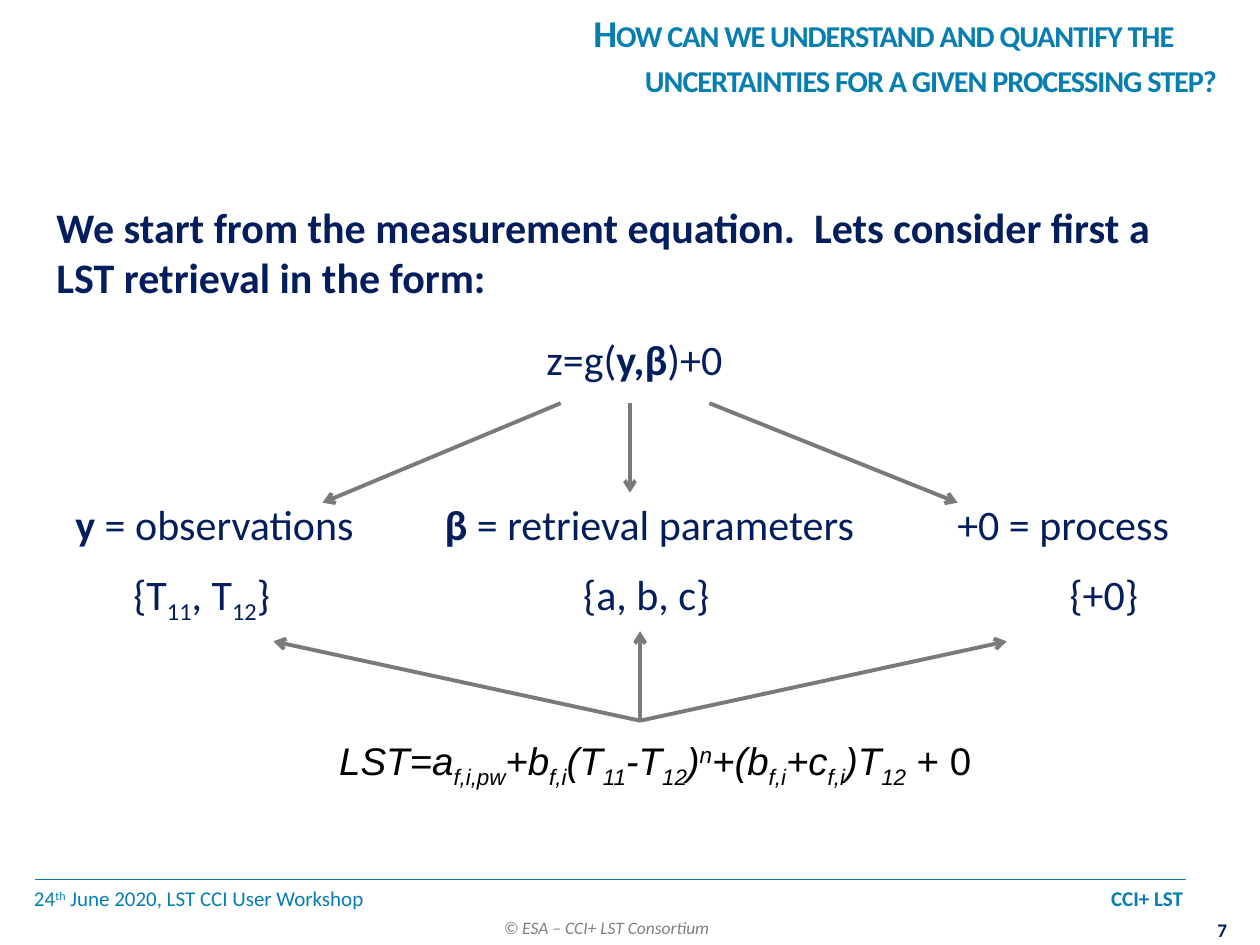
from lxml.etree import SubElement
from pptx import Presentation
from pptx.dml.color import RGBColor
from pptx.enum.shapes import MSO_CONNECTOR
from pptx.enum.text import MSO_ANCHOR, PP_ALIGN
from pptx.oxml.ns import qn
from pptx.util import Inches, Pt

COLORS = {"teal": "067EB0", "navy": "041E5D", "footer": "808080",
          "arrow": "7A7A7A", "black": "000000"}
SUB, SUP = -25, 30

prs = Presentation()
prs.slide_width, prs.slide_height = Inches(10), Inches(7.5)
slide = prs.slides.add_slide(prs.slide_layouts[6])


def add_text(box, paragraphs, size, color, font="Calibri", inset=(0.1, 0.05), wrap=True):
    """Add a text box; a paragraph is (runs, options), a run is (text, style, baseline).

    Style letters are b for bold and i for italic; baseline is a percentage.
    """
    frame = slide.shapes.add_textbox(*map(Inches, box)).text_frame
    frame.word_wrap = wrap
    frame.margin_left = frame.margin_right = Inches(inset[0])
    frame.margin_top = frame.margin_bottom = Inches(inset[1])
    for index, (runs, options) in enumerate(paragraphs):
        paragraph = frame.paragraphs[0] if index == 0 else frame.add_paragraph()
        if "tabs" in options:
            tab_list = SubElement(paragraph._p.get_or_add_pPr(), qn("a:tabLst"))
            for position, side in options["tabs"]:
                SubElement(tab_list, qn("a:tab"), pos=str(Inches(position)), algn=side)
        paragraph.alignment = options.get("align", PP_ALIGN.LEFT)
        paragraph.space_before = Pt(options.get("before", 0))
        paragraph.space_after = Pt(options.get("after", 0))
        for text, style, baseline in runs:
            run = paragraph.add_run()
            run.text = text
            run.font.name, run.font.size = font, Pt(size)
            run.font.bold, run.font.italic = "b" in style, "i" in style
            run.font.color.rgb = RGBColor.from_string(COLORS[color])
            if baseline:
                run.font._element.set("baseline", str(baseline * 1000))
    return frame


def add_line(start, end, color, width, arrow=False):
    line = slide.shapes.add_connector(MSO_CONNECTOR.STRAIGHT, *map(Inches, start + end))
    line.line.color.rgb = RGBColor.from_string(COLORS[color])
    line.line.width = Pt(width)
    if arrow:
        SubElement(line.line._get_or_add_ln(), qn("a:tailEnd"), type="arrow")
    SubElement(line._element.spPr, qn("a:effectLst"))


# Footer
add_text((0.27, 6.98, 9.14, 0.3),
         [([("24", "", 0), ("th", "", SUP), (" June 2020, LST CCI User Workshop\t", "", 0),
            ("CCI+ LST", "b", 0)], {"tabs": [(9.12, "r")]})],
         12, "teal", inset=(0, 0.05))
add_line((0.28, 6.98), (9.41, 6.98), "teal", 1)
add_text((3.9, 7.23, 1.86, 0.27), [([("© ESA – CCI+ LST Consortium", "i", 0)], {})],
         10, "footer", wrap=False)
add_text((9.57, 7.29, 0.26, 0.19), [([("7", "b", 0)], {"align": PP_ALIGN.CENTER})],
         11, "navy", inset=(0, 0), wrap=False)

# Title
title = add_text(
    (3.43, 0, 5.98, 0.87),
    [([("How can we understand and quantify the uncertainties for a given processing step?",
        "b", 0)], {"align": PP_ALIGN.RIGHT})], 21.6, "teal")
title.vertical_anchor = MSO_ANCHOR.MIDDLE
title_style = title.paragraphs[0].runs[0].font._element
title_style.set("cap", "small")
title_style.set("spc", "-60")

# Measurement equation and its terms
add_text((0.35, 1.55, 9.37, 2.91), [
    ([("We start from the measurement equation.  Lets consider first a LST retrieval "
       "in the form:", "b", 0)], {"after": 6}),
    ([("z=g(", "", 0), ("y,β", "b", 0), (")+0", "", 0)],
     {"align": PP_ALIGN.CENTER, "before": 12, "after": 6}),
    ([("\ty", "b", 0), (" = observations\t", "", 0), ("β", "b", 0),
      (" = retrieval parameters\t+0 = process", "", 0)],
     {"before": 59.3, "after": 6, "tabs": [(0.15, "l"), (3.08, "l"), (7.15, "l")]}),
], 24, "navy")

# LST retrieval
lst_terms = [("LST=a", 0), ("f,i,pw", SUB), ("+b", 0), ("f,i", SUB), ("(T", 0), ("11", SUB),
             ("-T", 0), ("12", SUB), (")", 0), ("n", SUP), ("+(b", 0), ("f,i", SUB),
             ("+c", 0), ("f,i", SUB), (")T", 0), ("12", SUB)]
lst_runs = [(text, "i", baseline) for text, baseline in lst_terms] + [(" + 0", "", 0)]
add_text((2.09, 5.8, 6.22, 0.47), [(lst_runs, {"align": PP_ALIGN.CENTER})],
         22, "black", font="Arial")

# Values of each term
add_text((0.35, 4.46, 9.37, 0.63), [
    ([("\t{T", "", 0), ("11", "", SUB), (", T", "", 0), ("12", "", SUB),
      ("}\t{a, b, c}\t{+0}", "", 0)],
     {"tabs": [(0.61, "l"), (4.18, "l"), (8.04, "l")]}),
], 24, "navy")

# Arrows from both equations to the terms
lst_origin = (5.08, 5.72)
arrows = [(lst_origin, (2.17, 5.09)), (lst_origin, (5.08, 5.01)), (lst_origin, (7.99, 5.09)),
          ((4.45, 3.2), (2.56, 3.99)), ((5, 3.2), (5, 3.91)), ((5.63, 3.2), (7.6, 3.99))]
for start, end in arrows:
    add_line(start, end, "arrow", 2.25, arrow=True)

prs.save("out.pptx")
